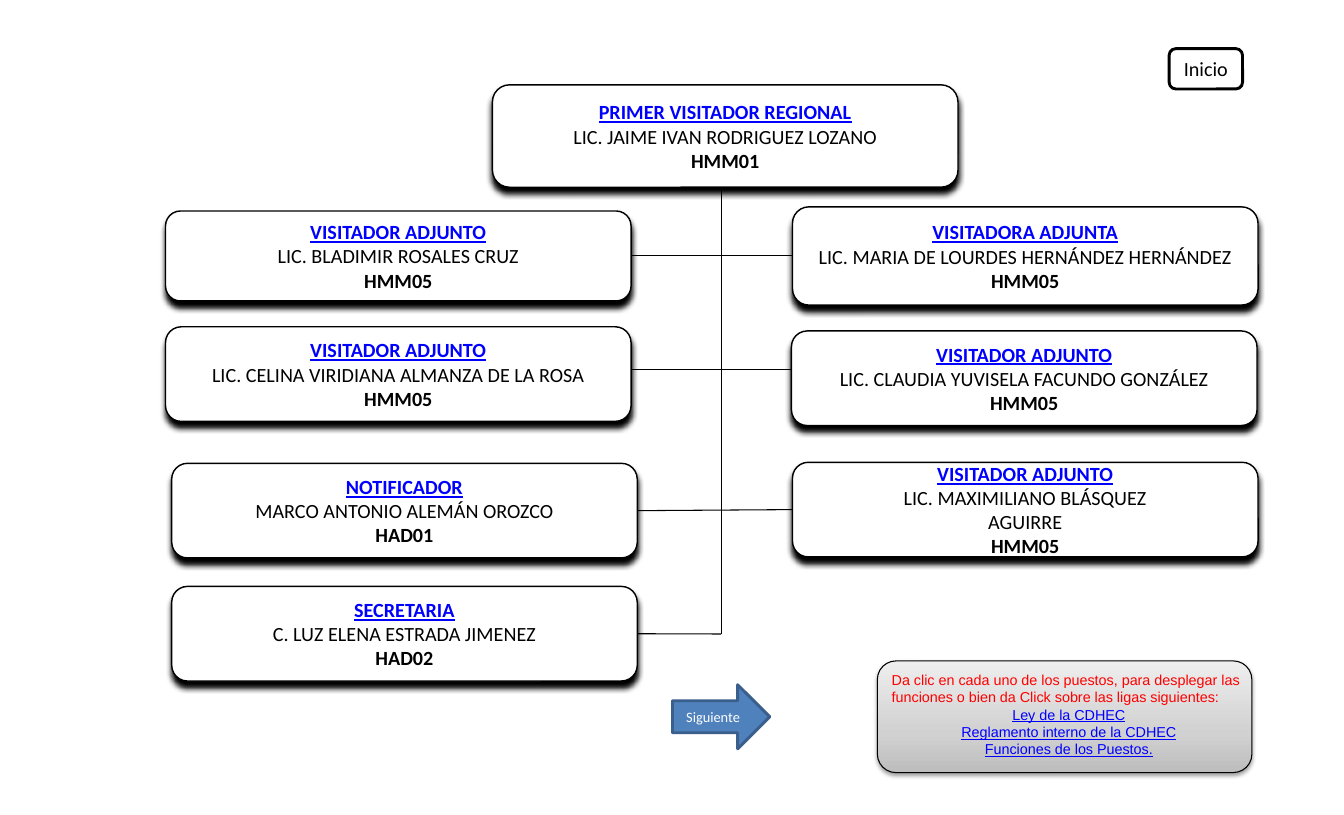
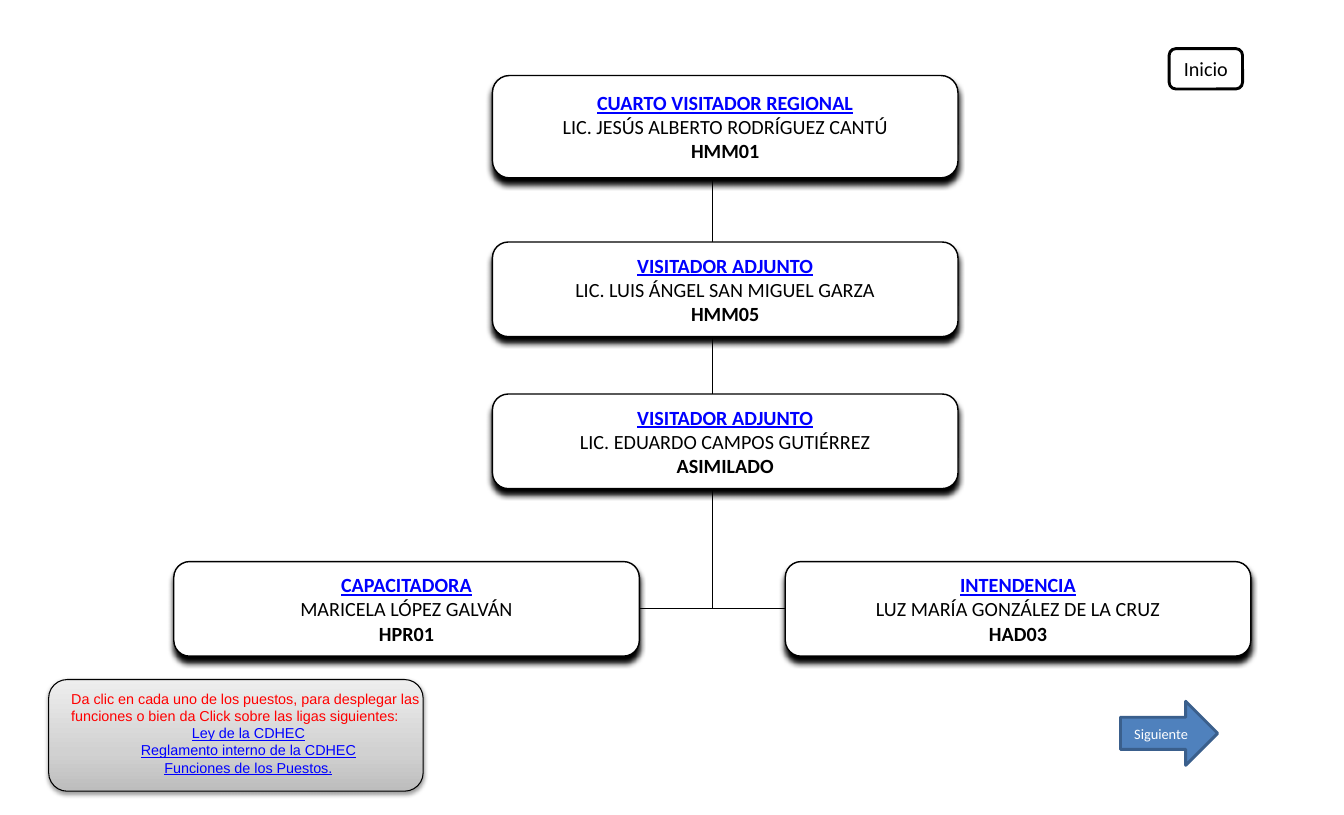
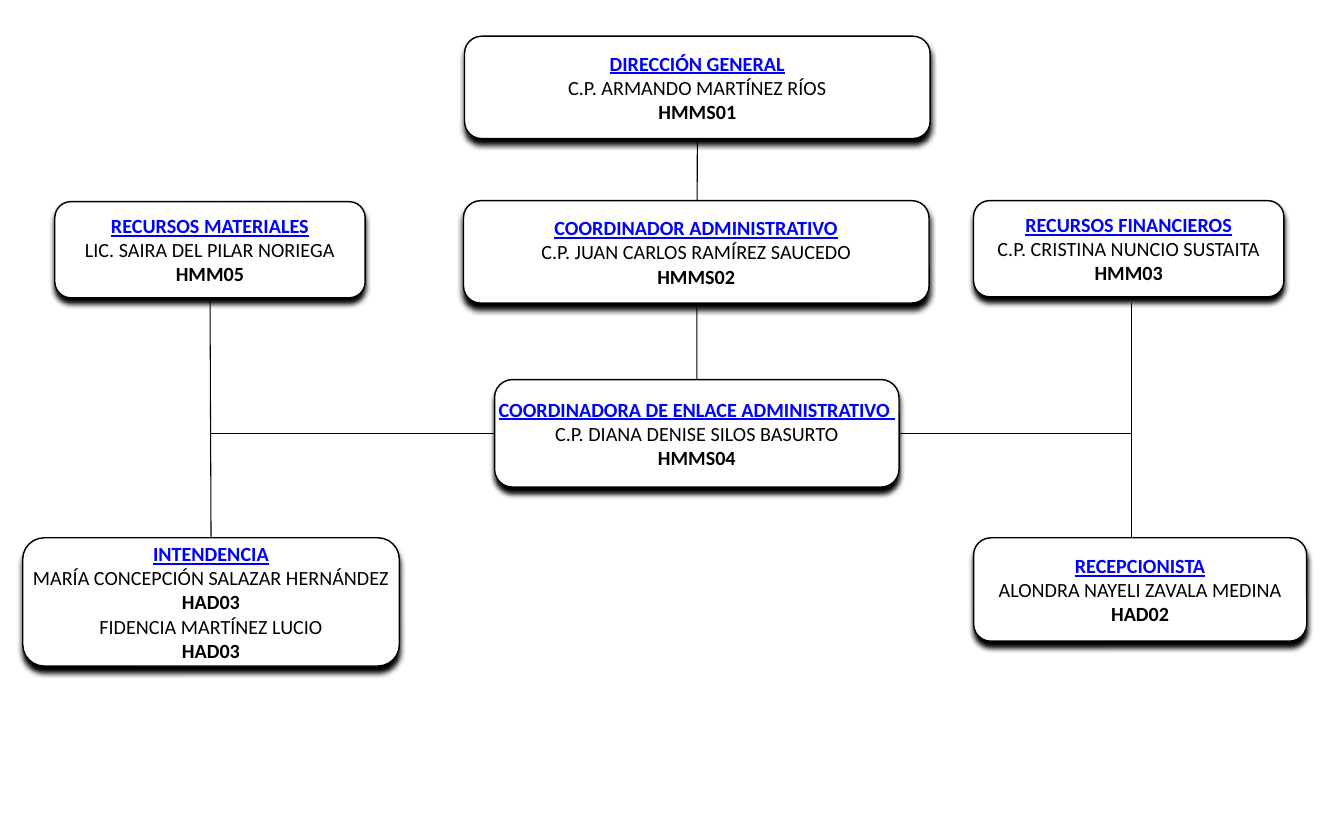
import copy

import lxml.etree
import pptx
import pptx.dml.color
import pptx.enum.shapes
import pptx.enum.text
import pptx.oxml.ns
import pptx.util

SHAPES = pptx.enum.shapes.MSO_SHAPE
ALIGN = pptx.enum.text.PP_ALIGN
CELL = 0.1
SLIDE_COLUMNS, SLIDE_ROWS = 129.9, 78.8
BLANK_LAYOUT = 6
POST_COLUMNS, POST_ROWS, HEAD_ROWS = 45, 9.15, 9.9
BOTTOM, LEFT, RIGHT, TOP = 2, 1, 3, 0
BLACK, WHITE, LINK, WARNING = "000000", "FFFFFF", "0000FF", "FF0000"
ARROW_FILL, ARROW_EDGE = "4F81BD", "3A5F8C"
PANEL_SHADES = ((0, "BDBDBD"), (0.35, "D1D1D1"), (1, "EEEEEE"))
HINT = ("Da clic en cada uno de los puestos, para desplegar las funciones "
        "o bien da Click sobre las ligas siguientes:")
HINT_LINKS = ("Ley de la CDHEC", "Reglamento interno de la CDHEC",
              "Funciones de los Puestos.")


def grid(*cells):
    """Turn counts of grid cells into lengths."""
    return [pptx.util.Inches(count * CELL) for count in cells]


def color(code):
    """Return the colour of a hex string."""
    return pptx.dml.color.RGBColor.from_string(code)


def write(frame, text, size=14, font="Calibri", ink=BLACK, bold=False,
          underline=False, align=ALIGN.CENTER):
    """Write one formatted paragraph, using the empty first one if there is one."""
    paragraph = frame.paragraphs[0]
    if paragraph.runs:
        paragraph = frame.add_paragraph()
    paragraph.alignment = align
    run = paragraph.add_run()
    run.text = text
    run.font.name = font
    run.font.size = pptx.util.Pt(size)
    run.font.bold = bold
    run.font.underline = underline
    run.font.color.rgb = color(ink)


def add_block(slide, kind, area, fill, edge, weight):
    """Add a preset shape without a shadow, its text in the middle."""
    block = slide.shapes.add_shape(kind, *grid(*area))
    block.shadow.inherit = False
    block.fill.solid()
    block.fill.fore_color.rgb = color(fill)
    block.line.color.rgb = color(edge)
    block.line.width = pptx.util.Pt(weight)
    block.text_frame.vertical_anchor = pptx.enum.text.MSO_ANCHOR.MIDDLE
    return block


def cast_shadow(block, blur, distance, opacity):
    """Give a shape a black shadow that falls straight down."""
    qn = pptx.oxml.ns.qn
    effects = block._element.spPr.find(qn("a:effectLst"))
    shadow = lxml.etree.SubElement(
        effects, qn("a:outerShdw"), blurRad=str(pptx.util.Pt(blur)),
        dist=str(pptx.util.Pt(distance)), dir="5400000", algn="ctr", rotWithShape="0")
    ink = lxml.etree.SubElement(shadow, qn("a:srgbClr"), val=BLACK)
    lxml.etree.SubElement(ink, qn("a:alpha"), val=str(opacity * 1000))


def add_post(slide, left, top, title, *holders, columns=POST_COLUMNS, rows=POST_ROWS):
    """Add a post with its title and the (name, code) of each holder."""
    post = add_block(slide, SHAPES.ROUNDED_RECTANGLE, (left, top, columns, rows),
                     WHITE, BLACK, 1)
    cast_shadow(post, 4, 4, 100)
    frame = post.text_frame
    frame.word_wrap = False
    frame.margin_left = frame.margin_right = pptx.util.Inches(0.17)
    frame.margin_top = frame.margin_bottom = pptx.util.Inches(0.09)
    write(frame, title, ink=LINK, bold=True, underline=True)
    for name, code in holders:
        for name_line in name.split("\n"):
            write(frame, name_line)
        write(frame, code, bold=True)
    return post


def add_line(slide, start, end):
    """Draw a thin line between points (x, y) or joints (post, side)."""
    joined = [not isinstance(tip[0], (int, float)) for tip in (start, end)]
    points = [(0, 0) if joint else tip for joint, tip in zip(joined, (start, end))]
    line = slide.shapes.add_connector(
        pptx.enum.shapes.MSO_CONNECTOR.STRAIGHT, *grid(*points[0], *points[1]))
    if joined[0]:
        line.begin_connect(*start)
    if joined[1]:
        line.end_connect(*end)
    line.line.color.rgb = color(BLACK)
    line.line.width = pptx.util.Pt(0.75)
    lxml.etree.SubElement(line._element.spPr, pptx.oxml.ns.qn("a:effectLst"))


def add_home(slide):
    """Add the button that stands for the start."""
    home = add_block(slide, SHAPES.ROUNDED_RECTANGLE, (113, 4.7, 7.1, 3.9),
                     WHITE, BLACK, 2)
    write(home.text_frame, "Inicio")


def add_next(slide, left, top):
    """Add the arrow that stands for the next slide."""
    arrow = add_block(slide, SHAPES.RIGHT_ARROW, (left, top, 9.4, 6.2),
                      ARROW_FILL, ARROW_EDGE, 2)
    write(arrow.text_frame, "Siguiente", size=10, ink=WHITE)


def add_hint(slide, left, top, indent):
    """Add the shaded panel with the hint and its links."""
    panel = add_block(slide, SHAPES.ROUNDED_RECTANGLE, (left, top, 36.2, 10.8),
                      WHITE, BLACK, 0.75)
    panel.fill.gradient()
    panel.fill.gradient_angle = 90
    stops = panel._element.spPr.find(".//" + pptx.oxml.ns.qn("a:gsLst"))
    stops.append(copy.deepcopy(stops[0]))
    for stop, (position, shade) in zip(panel.fill.gradient_stops, PANEL_SHADES):
        stop.position = position
        stop.color.rgb = color(shade)
    cast_shadow(panel, 3.1, 1.6, 38)

    hint = slide.shapes.add_textbox(*grid(left + indent, top + 0.5, 36.2, 9.4))
    frame = hint.text_frame
    frame.word_wrap = True
    frame.auto_size = pptx.enum.text.MSO_AUTO_SIZE.SHAPE_TO_FIT_TEXT
    write(frame, HINT, size=10, font="Arial", ink=WARNING, align=ALIGN.LEFT)
    for link in HINT_LINKS:
        write(frame, link, size=10, font="Arial", ink=LINK, underline=True)


def build_first_region(slide):
    """Draw the chart of the first regional office."""
    trunk, left, low_left, right = 69.7, 16, 16.6, 76.6
    add_line(slide, (58.7, 35.7), (81.6, 35.7))
    add_post(slide, 47.6, 8.2, "PRIMER VISITADOR REGIONAL",
             ("LIC. JAIME IVAN RODRIGUEZ LOZANO", "HMM01"), rows=HEAD_ROWS)
    bladimir = add_post(slide, left, 20.4, "VISITADOR ADJUNTO",
                        ("LIC. BLADIMIR ROSALES CRUZ", "HMM05"), rows=8.7)
    lourdes = add_post(slide, right, 20, "VISITADORA ADJUNTA",
                       ("LIC. MARIA DE LOURDES HERNÁNDEZ HERNÁNDEZ", "HMM05"), rows=9.5)
    add_post(slide, left, 31.6, "VISITADOR ADJUNTO",
             ("LIC. CELINA VIRIDIANA ALMANZA DE LA ROSA", "HMM05"))
    add_post(slide, right - 0.1, 32, "VISITADOR ADJUNTO",
             ("LIC. CLAUDIA YUVISELA FACUNDO GONZÁLEZ", "HMM05"))
    notifier = add_post(slide, low_left, 44.8, "NOTIFICADOR",
                        ("MARCO ANTONIO ALEMÁN OROZCO", "HAD01"))
    maximiliano = add_post(slide, right, 44.7, "VISITADOR ADJUNTO",
                           ("LIC. MAXIMILIANO BLÁSQUEZ\nAGUIRRE", "HMM05"))
    secretary = add_post(slide, low_left, 56.7, "SECRETARIA",
                         ("C. LUZ ELENA ESTRADA JIMENEZ", "HAD02"))
    add_line(slide, (bladimir, RIGHT), (lourdes, LEFT))
    add_line(slide, (maximiliano, LEFT), (notifier, RIGHT))
    add_line(slide, (trunk, 18.4), (trunk, 61.3))
    add_line(slide, (trunk, 61.3), (secretary, RIGHT))
    add_home(slide)
    add_hint(slide, 84.8, 63.9, 0.4)
    add_next(slide, 65, 66.2)


def build_fourth_region(slide):
    """Draw the chart of the fourth regional office."""
    trunk, middle = 68.85, 47.6
    add_line(slide, (trunk, 17.3), (trunk, 58.9))
    add_post(slide, middle, 7.3, "CUARTO VISITADOR REGIONAL",
             ("LIC. JESÚS ALBERTO RODRÍGUEZ CANTÚ", "HMM01"), rows=HEAD_ROWS)
    add_post(slide, middle, 23.4, "VISITADOR ADJUNTO",
             ("LIC. LUIS ÁNGEL SAN MIGUEL GARZA", "HMM05"))
    add_post(slide, middle, 38.1, "VISITADOR ADJUNTO",
             ("LIC. EDUARDO CAMPOS GUTIÉRREZ", "ASIMILADO"))
    trainer = add_post(slide, 16.8, 54.3, "CAPACITADORA",
                       ("MARICELA LÓPEZ GALVÁN", "HPR01"))
    cleaning = add_post(slide, 75.9, 54.3, "INTENDENCIA",
                        ("LUZ MARÍA GONZÁLEZ DE LA CRUZ", "HAD03"))
    add_line(slide, (trainer, RIGHT), (cleaning, LEFT))
    add_home(slide)
    add_hint(slide, 4.7, 65.7, 1.2)
    add_next(slide, 108.3, 67.8)


def build_administration(slide):
    """Draw the chart of the general direction."""
    left_trunk, right_trunk, right = 20.3, 109.4, 94.1
    add_line(slide, (right_trunk, 29.3), (right_trunk, 52.5))
    add_line(slide, (left_trunk, 41.9), (right_trunk, 41.9))
    direction = add_post(slide, 44.9, 3.5, "DIRECCIÓN GENERAL",
                         ("C.P. ARMANDO MARTÍNEZ RÍOS", "HMMS01"), rows=HEAD_ROWS)
    liaison = add_post(slide, 47.8, 36.7, "COORDINADORA DE ENLACE ADMINISTRATIVO ",
                       ("C.P. DIANA DENISE SILOS BASURTO", "HMMS04"),
                       columns=39.1, rows=10.4)
    add_line(slide, (direction, BOTTOM), (liaison, TOP))
    add_post(slide, 44.8, 19.4, "COORDINADOR ADMINISTRATIVO",
             ("C.P. JUAN CARLOS RAMÍREZ SAUCEDO", "HMMS02"), rows=HEAD_ROWS)
    materials = add_post(slide, 5.3, 19.5, "RECURSOS MATERIALES",
                         ("LIC. SAIRA DEL PILAR NORIEGA", "HMM05"), columns=30, rows=9.3)
    add_post(slide, right, 19.4, "RECURSOS FINANCIEROS",
             ("C.P. CRISTINA NUNCIO SUSTAITA", "HMM03"), columns=30, rows=9.3)
    cleaning = add_post(slide, 2.2, 52, "INTENDENCIA",
                        ("MARÍA CONCEPCIÓN SALAZAR HERNÁNDEZ", "HAD03"),
                        ("FIDENCIA MARTÍNEZ LUCIO", "HAD03"), columns=36.4, rows=12.4)
    add_post(slide, right, 52, "RECEPCIONISTA",
             ("ALONDRA NAYELI ZAVALA MEDINA", "HAD02"), columns=32.2, rows=10)
    add_line(slide, (materials, BOTTOM), (cleaning, TOP))


def main():
    """Build and save the three organisation charts."""
    deck = pptx.Presentation()
    deck.slide_width, deck.slide_height = grid(SLIDE_COLUMNS, SLIDE_ROWS)
    for build in (build_first_region, build_fourth_region, build_administration):
        build(deck.slides.add_slide(deck.slide_layouts[BLANK_LAYOUT]))
    deck.save("out.pptx")


if __name__ == "__main__":
    main()
